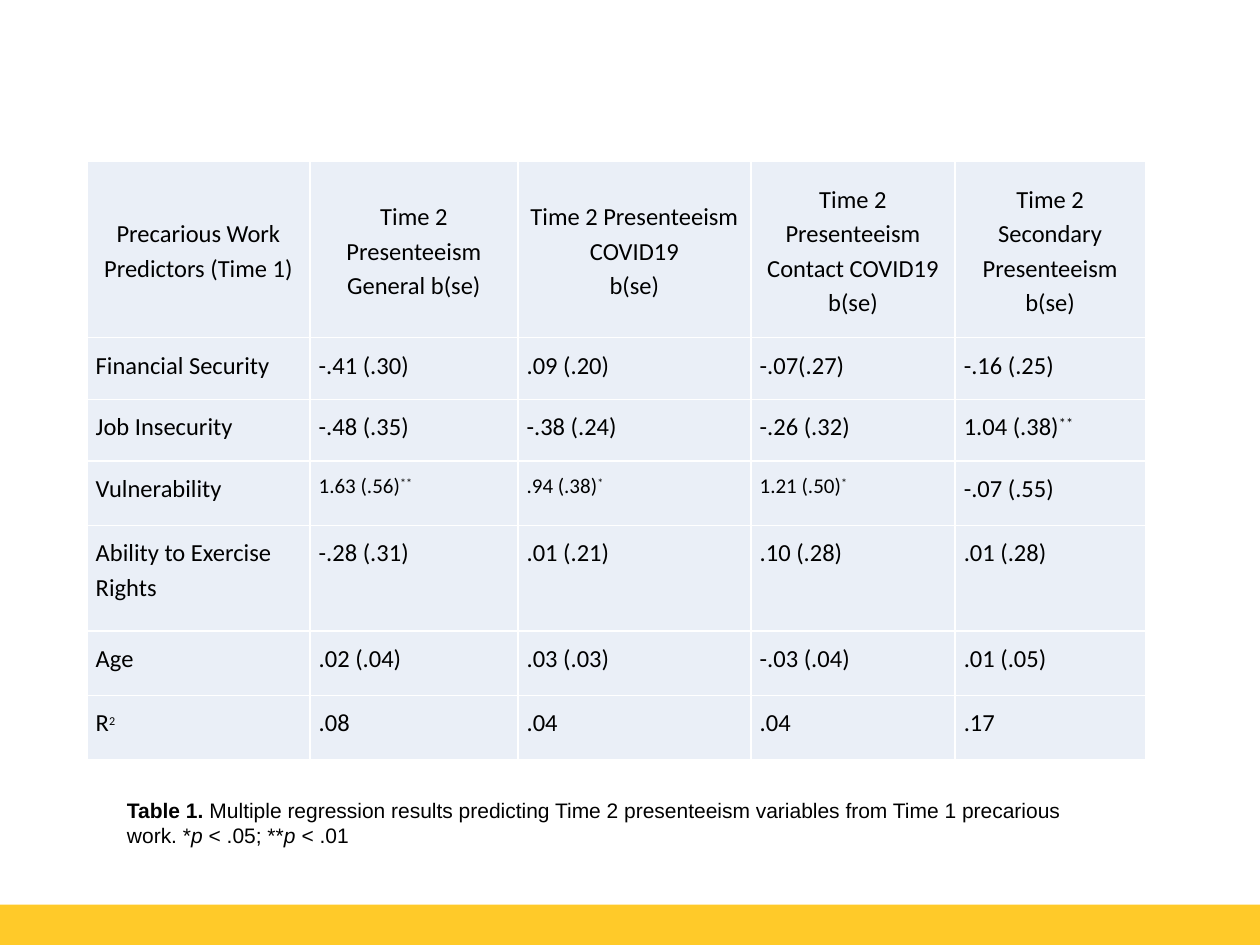
from lxml import etree
from pptx import Presentation
from pptx.dml.color import RGBColor
from pptx.enum.shapes import MSO_SHAPE
from pptx.enum.text import MSO_ANCHOR, PP_ALIGN
from pptx.oxml.ns import qn
from pptx.util import Inches, Pt

RECTANGLE = MSO_SHAPE.RECTANGLE
MIDDLE, TOP = MSO_ANCHOR.MIDDLE, MSO_ANCHOR.TOP
CENTER, LEFT = PP_ALIGN.CENTER, PP_ALIGN.LEFT
BLANK_LAYOUT = 6

COLORS = {"band": "FFCA29", "cell": "EAEFF7", "border": "FFFFFF", "text": "000000"}

COLUMN_WIDTHS = [1.77, 1.65, 1.85, 1.62, 1.51]
ROW_HEIGHTS = [1.4, 0.49, 0.49, 0.51, 0.84, 0.51, 0.51]

# A caret starts a superscript; a line break starts a new paragraph
RESULTS = [
    ["Precarious Work Predictors (Time 1)", "Time 2 Presenteeism General b(se)",
     "Time 2 Presenteeism COVID19\nb(se)", "Time 2 Presenteeism Contact COVID19 b(se)",
     "Time 2 Secondary\nPresenteeism b(se)"],
    ["Financial Security", "-.41 (.30)", ".09 (.20)", "-.07(.27)", "-.16 (.25)"],
    ["Job Insecurity", "-.48 (.35)", "-.38 (.24)", "-.26 (.32)", "1.04 (.38)^**"],
    ["Vulnerability", "1.63 (.56)^**", ".94 (.38)^*", "1.21 (.50)^*", "-.07 (.55)"],
    ["Ability to Exercise Rights", "-.28 (.31)", ".01 (.21)", ".10 (.28)", ".01 (.28)"],
    ["Age", ".02 (.04)", ".03 (.03)", "-.03 (.04)", ".01 (.05)"],
    ["R^2", ".08", ".04", ".04", ".17"],
]
VULNERABILITY_ROW = 3

# Caption text with its bold and italic settings
CAPTION = [
    ("Table 1. ", True, False),
    ("Multiple regression results predicting Time 2 presenteeism variables "
     "from Time 1 precarious work. *", False, False),
    ("p ", False, True),
    ("< .05; **", False, False),
    ("p ", False, True),
    ("< .01", False, False),
]


def color(name):
    return RGBColor.from_string(COLORS[name])


def add_span(para, text, size, font, bold=False, italic=False):
    span = para.add_run()
    span.text = text
    span.font.size = Pt(size)
    span.font.name = font
    span.font.bold = bold
    span.font.italic = italic
    span.font.color.rgb = color("text")
    return span


def add_band(page):
    band = page.shapes.add_shape(RECTANGLE, 0, Inches(7.18), Inches(10), Inches(0.32))
    band.shadow.inherit = False
    band.fill.solid()
    band.fill.fore_color.rgb = color("band")
    band.line.fill.background()


def set_borders(cell):
    properties = cell._tc.get_or_add_tcPr()
    for side in ("a:lnL", "a:lnR", "a:lnT", "a:lnB"):
        line = etree.SubElement(properties, qn(side), w=str(Pt(1)))
        fill = etree.SubElement(line, qn("a:solidFill"))
        etree.SubElement(fill, qn("a:srgbClr"), val=COLORS["border"])


def format_cell(cell, is_header):
    cell.margin_left = cell.margin_right = Inches(0.07)
    cell.margin_top = cell.margin_bottom = Inches(0.07)
    cell.vertical_anchor = MIDDLE if is_header else TOP
    set_borders(cell)
    cell.fill.solid()
    cell.fill.fore_color.rgb = color("cell")


def fill_cell(cell, text, is_header, size, raised_size):
    frame = cell.text_frame
    for index, line in enumerate(text.split("\n")):
        para = frame.add_paragraph() if index else frame.paragraphs[0]
        para.alignment = CENTER if is_header else LEFT
        para.line_spacing = 1.15
        base, _, raised = line.partition("^")
        add_span(para, base, size, "Calibri")
        if raised:
            span = add_span(para, raised, raised_size, "Calibri")
            span.font._element.set("baseline", "30000")


def add_results_table(page):
    table = page.shapes.add_table(
        len(ROW_HEIGHTS), len(COLUMN_WIDTHS), Inches(0.69), Inches(1.28),
        Inches(sum(COLUMN_WIDTHS)), Inches(sum(ROW_HEIGHTS))).table
    for column, width in zip(table.columns, COLUMN_WIDTHS):
        column.width = Inches(width)
    for row, height in zip(table.rows, ROW_HEIGHTS):
        row.height = Inches(height)
    for r, values in enumerate(RESULTS):
        for c, text in enumerate(values):
            cell = table.cell(r, c)
            is_header = r == 0
            # Significant vulnerability effects are set smaller
            size = 12 if r == VULNERABILITY_ROW and "^" in text else 14
            raised_size = 12 if text == "R^2" else size
            format_cell(cell, is_header)
            fill_cell(cell, text, is_header, size, raised_size)


def add_caption(page):
    box = page.shapes.add_textbox(Inches(0.91), Inches(6.28), Inches(7.64), Inches(0.5))
    frame = box.text_frame
    frame.word_wrap = True
    frame.vertical_anchor = MIDDLE
    for text, bold, italic in CAPTION:
        add_span(frame.paragraphs[0], text, 12, "Arial", bold, italic)


def main():
    deck = Presentation()
    deck.slide_width = Inches(10)
    deck.slide_height = Inches(7.5)
    page = deck.slides.add_slide(deck.slide_layouts[BLANK_LAYOUT])
    add_band(page)
    add_results_table(page)
    add_caption(page)
    deck.save("out.pptx")


if __name__ == "__main__":
    main()
